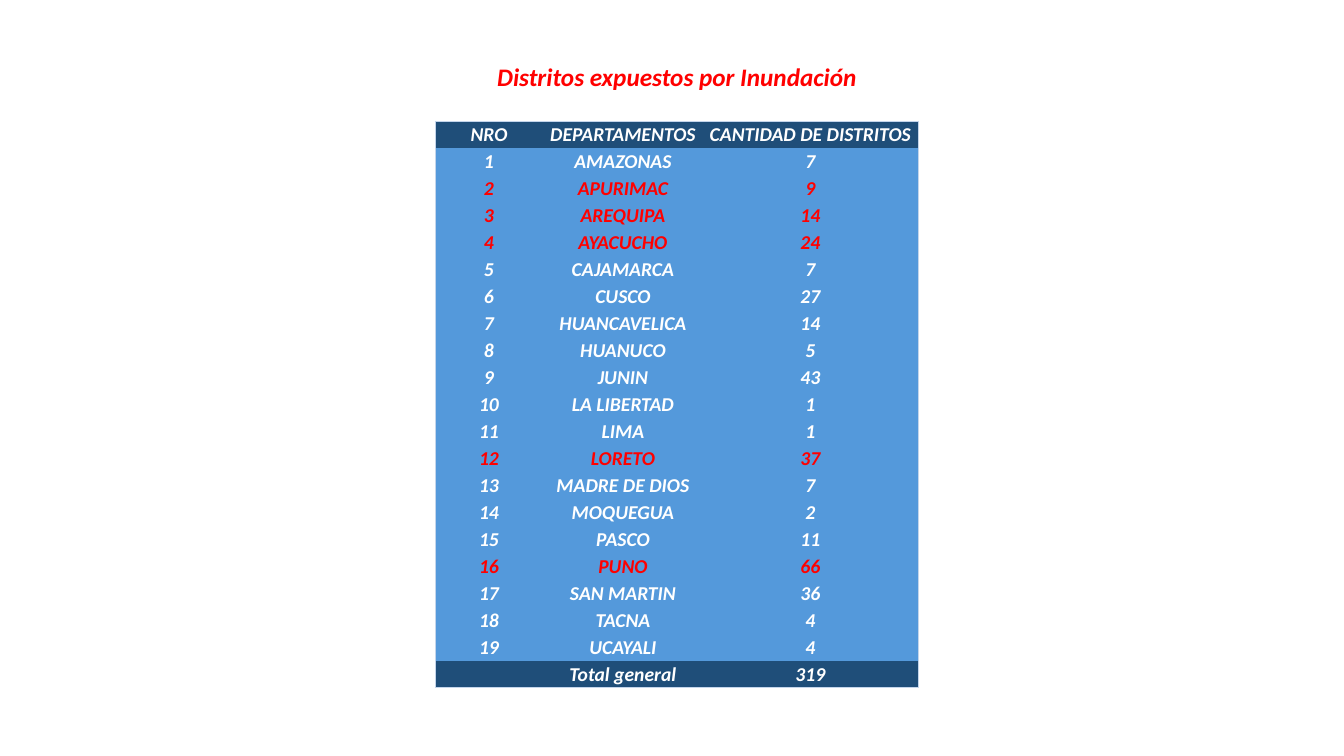
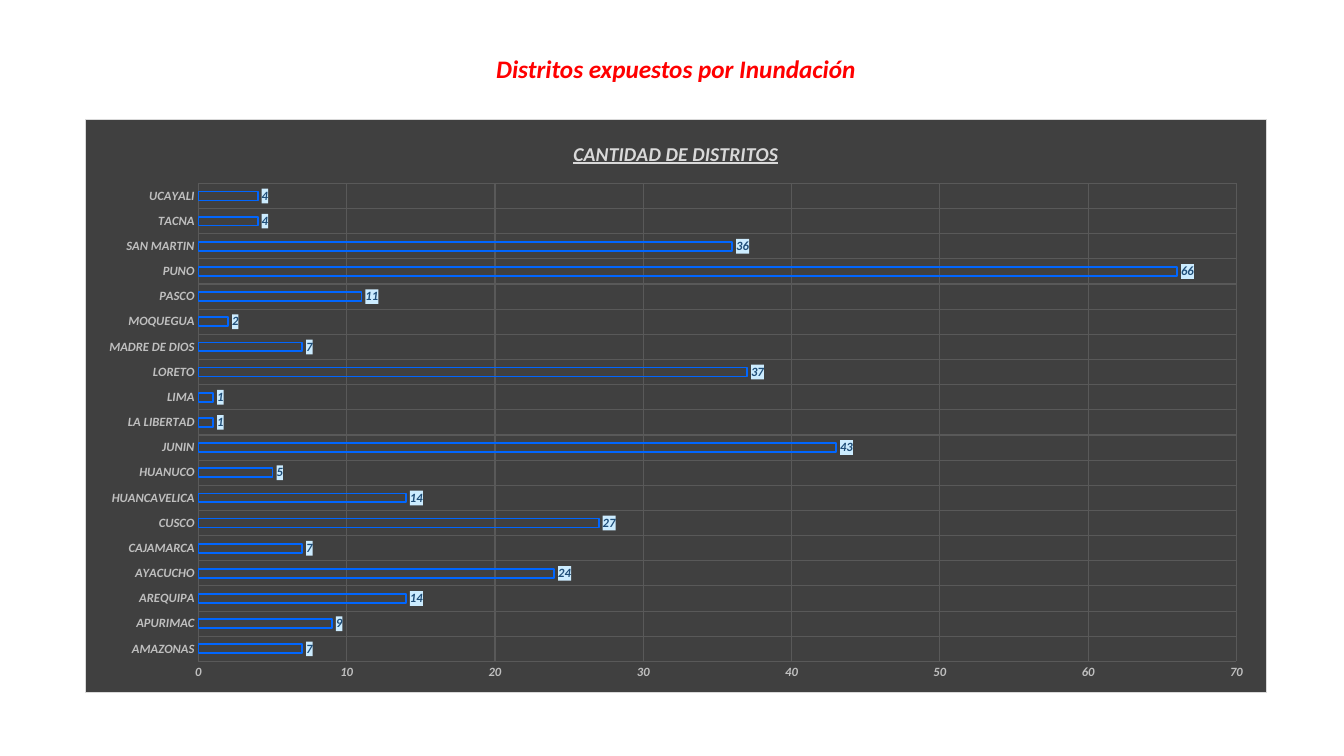
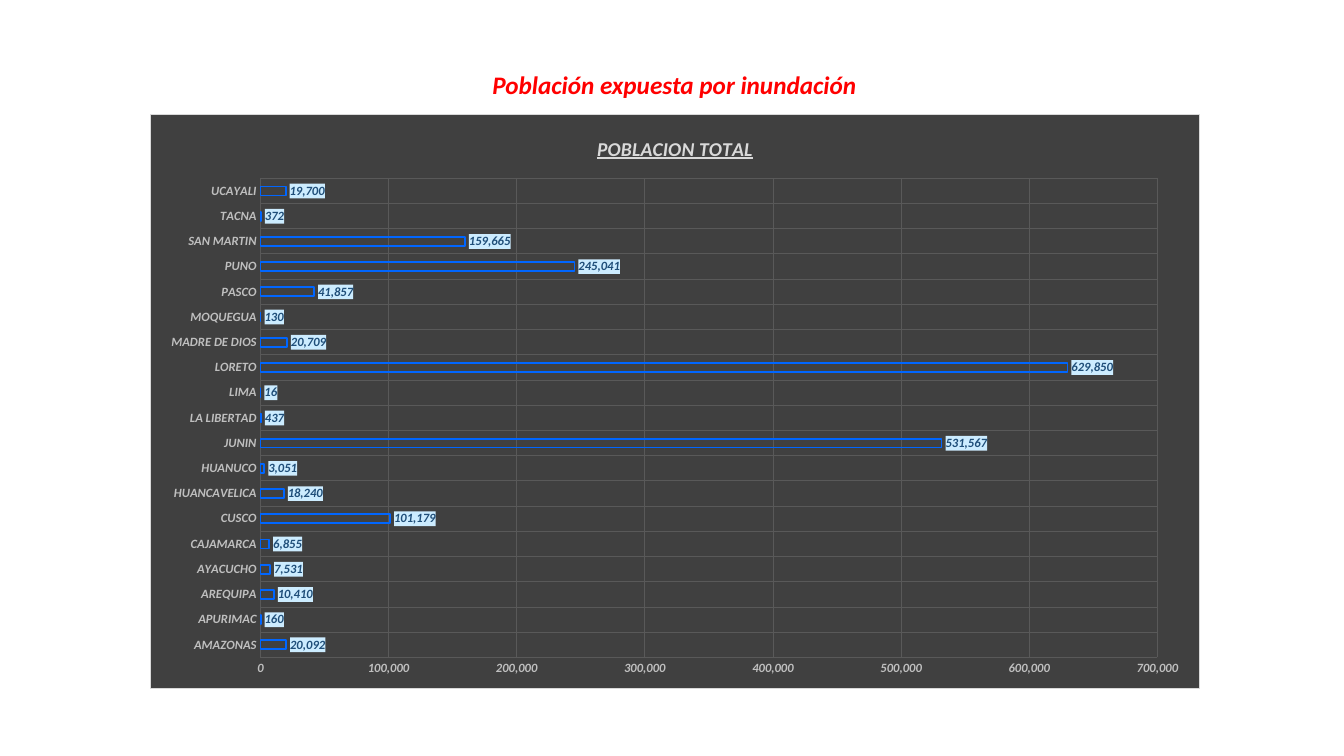
from dataclasses import dataclass

from lxml import etree
from pptx import Presentation
from pptx import util as u
from pptx.chart.data import CategoryChartData
from pptx.dml.color import RGBColor
from pptx.enum import chart as ch
from pptx.enum import text as t
from pptx.oxml import parse_xml
from pptx.oxml.ns import nsdecls, qn

PX = 12192000 / 1344


@dataclass(frozen=True)
class Theme:
    """Colours, font and type sizes shared by the slides."""
    font: str = "Calibri"
    alert: str = "FF0000"
    white: str = "FFFFFF"
    navy: str = "1F4E79"
    sky: str = "5499DB"
    outline: str = "C4D5EB"
    panel: str = "404040"
    grid: str = "595959"
    frame: str = "D9D9D9"
    axis: str = "BFBFBF"
    bar: str = "0066FF"
    label: str = "CCECFF"
    title_size: int = 18
    body_size: int = 14
    axis_size: int = 9


THEME = Theme()
NO_STYLE = "{2D5ABB26-0587-4C30-8999-92F81FD0307C}"
DISTRICTS_TITLE = "Distritos expuestos por Inundación"
HIGHLIGHTED = {"APURIMAC", "AREQUIPA", "AYACUCHO", "LORETO", "PUNO"}
DEPARTMENTS = [
    ("AMAZONAS", 7, 20092), ("APURIMAC", 9, 160), ("AREQUIPA", 14, 10410),
    ("AYACUCHO", 24, 7531), ("CAJAMARCA", 7, 6855), ("CUSCO", 27, 101179),
    ("HUANCAVELICA", 14, 18240), ("HUANUCO", 5, 3051), ("JUNIN", 43, 531567),
    ("LA LIBERTAD", 1, 437), ("LIMA", 1, 16), ("LORETO", 37, 629850),
    ("MADRE DE DIOS", 7, 20709), ("MOQUEGUA", 2, 130), ("PASCO", 11, 41857),
    ("PUNO", 66, 245041), ("SAN MARTIN", 36, 159665), ("TACNA", 4, 372),
    ("UCAYALI", 4, 19700),
]
NAMES, DISTRICTS, POPULATION = zip(*DEPARTMENTS)


def emu(px):
    """Turn px into EMU."""
    return u.Emu(round(px * PX))


def style(font, size, color, underline=None):
    """Apply the shared bold italic face."""
    font.name, font.size = THEME.font, u.Pt(size)
    font.bold = font.italic = True
    font.underline = underline
    font.color.rgb = RGBColor.from_string(color)


def add_titled_slide(deck, heading, box):
    """Add a slide with its red heading in the title placeholder."""
    slide = deck.slides.add_slide(deck.slide_layouts[5])
    title = slide.shapes.title
    title.left, title.top, title.width, title.height = map(emu, box)
    frame = title.text_frame
    frame.text = heading
    frame.word_wrap = False
    frame.auto_size = t.MSO_AUTO_SIZE.NONE
    frame.vertical_anchor = t.MSO_ANCHOR.MIDDLE
    paragraph = frame.paragraphs[0]
    paragraph.alignment = t.PP_ALIGN.CENTER
    style(paragraph.runs[0].font, THEME.title_size, THEME.alert)
    return slide


def outline_cell(cell, sides):
    """Draw the thin outer border on the given sides of a cell."""
    for side in sides:
        cell._tc.get_or_add_tcPr().append(parse_xml(
            f'<a:ln{side} {nsdecls("a")} w="6350"><a:solidFill>'
            f'<a:srgbClr val="{THEME.outline}"/></a:solidFill></a:ln{side}>'))


def fill_cell(cell, content, fill, color):
    """Write one centred cell on its fill."""
    cell.fill.solid()
    cell.fill.fore_color.rgb = RGBColor.from_string(fill)
    cell.margin_left = cell.margin_right = cell.margin_top = emu(1)
    cell.margin_bottom = 0
    cell.vertical_anchor = t.MSO_ANCHOR.MIDDLE
    cell.text = content
    paragraph = cell.text_frame.paragraphs[0]
    paragraph.alignment = t.PP_ALIGN.CENTER
    for run in paragraph.runs:
        style(run.font, THEME.body_size, color)
    if not content:
        etree.SubElement(paragraph._p, qn("a:endParaRPr"), sz=str(THEME.body_size * 100))


def add_district_table(slide, left, top, widths, row_height):
    """Place the table of districts by department with its total."""
    rows = [("NRO", "DEPARTAMENTOS", "CANTIDAD DE DISTRITOS")]
    rows += [(str(n), name, str(count))
             for n, (name, count, _) in enumerate(DEPARTMENTS, 1)]
    rows.append(("", "Total general", str(sum(DISTRICTS))))
    last_row, last_col = len(rows) - 1, len(widths) - 1
    table = slide.shapes.add_table(
        len(rows), len(widths), emu(left), emu(top),
        emu(sum(widths)), emu(row_height * len(rows))).table
    table.first_row = table.horz_banding = False
    table._tbl.tblPr.find(qn("a:tableStyleId")).text = NO_STYLE
    for column, width in zip(table.columns, widths):
        column.width = emu(width)
    for r, row in enumerate(rows):
        table.rows[r].height = emu(row_height)
        fill = THEME.navy if r in (0, last_row) else THEME.sky
        color = THEME.alert if row[1] in HIGHLIGHTED else THEME.white
        for c, content in enumerate(row):
            cell = table.cell(r, c)
            edges = (("L", c == 0), ("R", c == last_col),
                     ("T", r == 0), ("B", r == last_row))
            outline_cell(cell, [side for side, outer in edges if outer])
            fill_cell(cell, content, fill, color)


def chart_fill(fill, line=None):
    """Build chart shape properties with a fill and an optional frame."""
    border = (f'<a:ln w="9525"><a:solidFill><a:srgbClr val="{line}"/>'
              '</a:solidFill></a:ln>') if line else ""
    return parse_xml(
        f'<c:spPr {nsdecls("c", "a")}><a:solidFill><a:srgbClr val="{fill}"/>'
        f'</a:solidFill>{border}</c:spPr>')


def place_plot(chart, box, plot):
    """Pin the inner plot area, given in px on the slide."""
    left, top, width, height = box
    fractions = {"x": (plot[0] - left) / width, "y": (plot[1] - top) / height,
                 "w": plot[2] / width, "h": plot[3] / height}
    area = chart.element.find(".//" + qn("c:plotArea"))
    for layout in area.findall(qn("c:layout")):
        area.remove(layout)
    sizes = "".join(f'<c:{k} val="{v:.4f}"/>' for k, v in fractions.items())
    area.insert(0, parse_xml(
        f'<c:layout {nsdecls("c")}><c:manualLayout><c:layoutTarget val="inner"/>'
        f'<c:xMode val="edge"/><c:yMode val="edge"/>{sizes}'
        '</c:manualLayout></c:layout>'))


def format_axis(axis):
    """Give an axis its grey labels and faint grid."""
    axis.major_tick_mark = axis.minor_tick_mark = ch.XL_TICK_MARK.NONE
    axis.has_major_gridlines = True
    grid = axis.major_gridlines.format.line
    grid.color.rgb = RGBColor.from_string(THEME.grid)
    grid.width = u.Pt(0.75)
    axis.format.line.fill.background()
    style(axis.tick_labels.font, THEME.axis_size, THEME.axis)


def format_bars(plot):
    """Outline the bars and label them on pale boxes."""
    plot.gap_width, plot.overlap = 182, -50
    plot.vary_by_categories = False
    bars = plot.series[0].format
    bars.fill.background()
    bars.line.color.rgb = RGBColor.from_string(THEME.bar)
    bars.line.width = u.Pt(1.25)
    plot.has_data_labels = True
    labels = plot.data_labels
    labels.show_value = True
    labels.number_format, labels.number_format_is_linked = "#,##0", False
    labels.position = ch.XL_LABEL_POSITION.OUTSIDE_END
    style(labels.font, THEME.axis_size, THEME.navy)
    labels._element.find(qn("c:txPr")).addprevious(chart_fill(THEME.label))


def add_department_chart(slide, heading, values, box, plot):
    """Place a dark bar chart with one bar for each department."""
    data = CategoryChartData(number_format="#,##0")
    data.categories = NAMES
    data.add_series(heading, values)
    chart = slide.shapes.add_chart(
        ch.XL_CHART_TYPE.BAR_CLUSTERED, *map(emu, box), data).chart
    chart.has_legend = False
    chart.font.name, chart.font.size = THEME.font, u.Pt(10)
    chart.element.find(qn("c:txPr")).addprevious(chart_fill(THEME.panel, THEME.frame))
    title = chart.chart_title
    title.text_frame.text = heading
    title.include_in_layout = False
    style(title.text_frame.paragraphs[0].runs[0].font,
          THEME.body_size, THEME.frame, underline=True)
    for axis in (chart.category_axis, chart.value_axis):
        format_axis(axis)
    number = chart.value_axis.tick_labels
    number.number_format, number.number_format_is_linked = "#,##0", False
    format_bars(chart.plots[0])
    place_plot(chart, box, plot)


def main():
    """Build the three slides."""
    deck = Presentation()
    deck.slide_width, deck.slide_height = emu(1344), emu(756)

    slide = add_titled_slide(deck, DISTRICTS_TITLE, (485, 56, 384, 41))
    add_district_table(slide, 435, 121, (108, 160, 215), 27)

    slide = add_titled_slide(deck, DISTRICTS_TITLE, (484, 48, 384, 41))
    add_department_chart(slide, "CANTIDAD DE DISTRITOS", DISTRICTS,
                         (85, 119, 1182, 574), (198, 183, 1039, 479))

    slide = add_titled_slide(deck, "Población expuesta por inundación",
                             (480, 64, 389, 41))
    add_department_chart(slide, "POBLACION TOTAL", POPULATION,
                         (150, 114, 1050, 575), (260, 178, 898, 480))

    deck.save("out.pptx")


if __name__ == "__main__":
    main()
